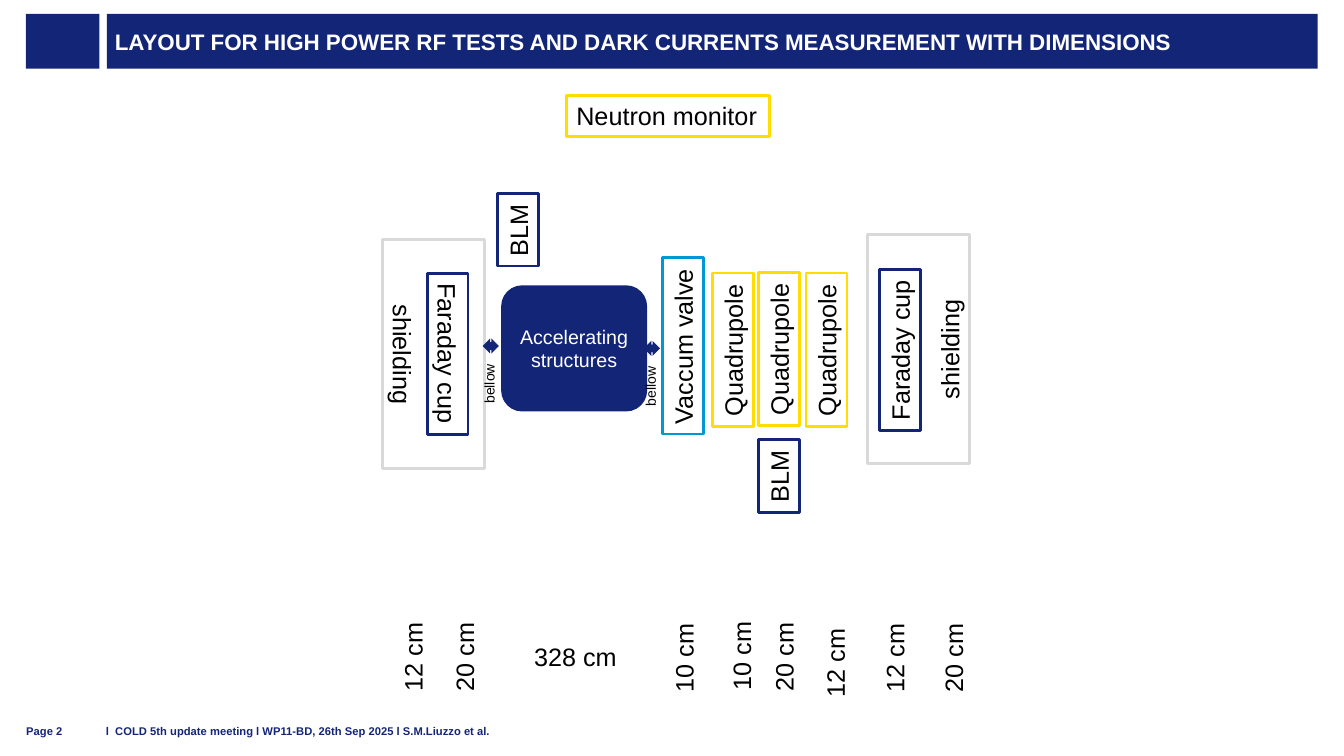
from pptx import Presentation
from pptx.dml.color import RGBColor
from pptx.enum.shapes import MSO_SHAPE
from pptx.enum.text import MSO_ANCHOR, PP_ALIGN
from pptx.util import Cm, Pt

RECT = MSO_SHAPE.RECTANGLE
ROUNDED = MSO_SHAPE.ROUNDED_RECTANGLE
DOUBLE_ARROW = MSO_SHAPE.LEFT_RIGHT_ARROW
TOP, MIDDLE, BOTTOM = MSO_ANCHOR.TOP, MSO_ANCHOR.MIDDLE, MSO_ANCHOR.BOTTOM
LEFT, CENTER = PP_ALIGN.LEFT, PP_ALIGN.CENTER

NAVY, YELLOW, CYAN, GREY = "132577", "FFDD00", "0098D4", "D9D9D9"
WHITE, BLACK = "FFFFFF", "000000"
UP, DOWN = 270, 90
ROW = 1.03


def rgb(value):
    return RGBColor.from_string(value)


class Diagram:
    font = "Arial"

    def __init__(self, slide):
        self.slide = slide

    def add_words(self, shape, text, size, color=BLACK, bold=False, align=LEFT,
                  anchor=TOP, wrap=True, margins=(0.25, 0.13)):
        frame = shape.text_frame
        frame.word_wrap = wrap
        frame.vertical_anchor = anchor
        frame.margin_left = frame.margin_right = Cm(margins[0])
        frame.margin_top = frame.margin_bottom = Cm(margins[1])
        paragraph = frame.paragraphs[0]
        paragraph.alignment = align
        run = paragraph.add_run()
        run.text = text
        run.font.name = self.font
        run.font.size = Pt(size)
        run.font.bold = bold
        run.font.color.rgb = rgb(color)

    def block(self, kind, cx, cy, width, height, fill, line=None, turn=0):
        shape = self.slide.shapes.add_shape(
            kind, Cm(cx - width / 2), Cm(cy - height / 2), Cm(width), Cm(height))
        shape.shadow.inherit = False
        shape.fill.solid()
        shape.fill.fore_color.rgb = rgb(fill)
        if line:
            shape.line.color.rgb = rgb(line)
            shape.line.width = Pt(2)
        else:
            shape.line.fill.background()
        shape.rotation = turn
        return shape

    def device(self, text, cx, cy, length, line, turn=UP):
        box = self.block(RECT, cx, cy, length, ROW, WHITE, line, turn)
        self.add_words(box, text, 18, wrap=False)

    def shielding(self, cx, cy, turn):
        box = self.block(RECT, cx, cy, 5.77, 2.57, WHITE, GREY, turn)
        self.add_words(box, "shielding", 18, align=CENTER, anchor=BOTTOM)

    def label(self, text, cx, cy, width, height=ROW, size=18, turn=0, **style):
        box = self.slide.shapes.add_textbox(
            Cm(cx - width / 2), Cm(cy - height / 2), Cm(width), Cm(height))
        box.rotation = turn
        self.add_words(box, text, size, **style)

    def bellow(self, cx, cy):
        self.block(DOUBLE_ARROW, cx, cy, 0.41, 0.38, NAVY)
        self.label("bellow", cx - 0.04, cy + 0.94, 1.52, 0.69, 10, UP, wrap=False)

    def footer(self, text, left, width):
        self.label(text, left + width / 2, 18.3, width, 0.58, 8, color=NAVY,
                   bold=True, anchor=BOTTOM, margins=(0, 0))


def main():
    deck = Presentation()
    deck.slide_width, deck.slide_height = Cm(33.87), Cm(19.05)
    layout = Diagram(deck.slides.add_slide(deck.slide_layouts[6]))

    layout.block(RECT, 1.58, 1.04, 1.85, 1.38, NAVY)
    title = layout.block(RECT, 17.95, 1.04, 30.51, 1.38, NAVY)
    layout.add_words(
        title,
        "LAYOUT FOR HIGH POWER RF TESTS AND DARK CURRENTS MEASUREMENT WITH DIMENSIONS",
        16, WHITE, bold=True, anchor=MIDDLE, margins=(0.2, 0))
    layout.footer("Page 2", 0.66, 1.52)
    layout.footer(
        "l  COLD 5th update meeting l WP11-BD, 26th Sep 2025 l S.M.Liuzzo et al.",
        2.67, 22.66)

    for dimension, cx, cy in (
        ("12 cm", 10.4, 16.54), ("20 cm", 11.7, 16.54), ("10 cm", 17.23, 16.56),
        ("10 cm", 18.68, 16.51), ("20 cm", 19.75, 16.54), ("12 cm", 21.04, 16.69),
        ("12 cm", 22.54, 16.56), ("20 cm", 24.02, 16.56),
    ):
        layout.label(dimension, cx, cy, 2.26, turn=UP)
    layout.label("328 cm", 14.52, 16.54, 2.62, wrap=False)

    layout.shielding(10.93, 8.93, DOWN)
    layout.shielding(23.15, 8.8, UP)
    layout.device("Faraday cup", 11.28, 8.92, 4.06, NAVY, DOWN)
    layout.device("Faraday cup", 22.68, 8.81, 4.06, NAVY)
    structures = layout.block(ROUNDED, 14.47, 8.78, 3.68, 3.18, NAVY)
    layout.add_words(structures, "Accelerating structures", 14, WHITE,
                     align=CENTER, anchor=MIDDLE)
    layout.device("Vaccum valve", 17.21, 8.71, 4.45, CYAN)
    for cx, cy in ((18.47, 8.81), (19.63, 8.79), (20.83, 8.81)):
        layout.device("Quadrupole", cx, cy, 3.86, YELLOW)
    for cx, cy in ((13.06, 5.79), (19.63, 11.99)):
        layout.device("BLM", cx, cy, 1.83, NAVY)
    layout.device("Neutron monitor", 16.83, 2.92, 5.11, YELLOW, 0)
    for cx, cy in ((12.37, 8.72), (16.43, 8.78)):
        layout.bellow(cx, cy)

    deck.save("out.pptx")


if __name__ == "__main__":
    main()
